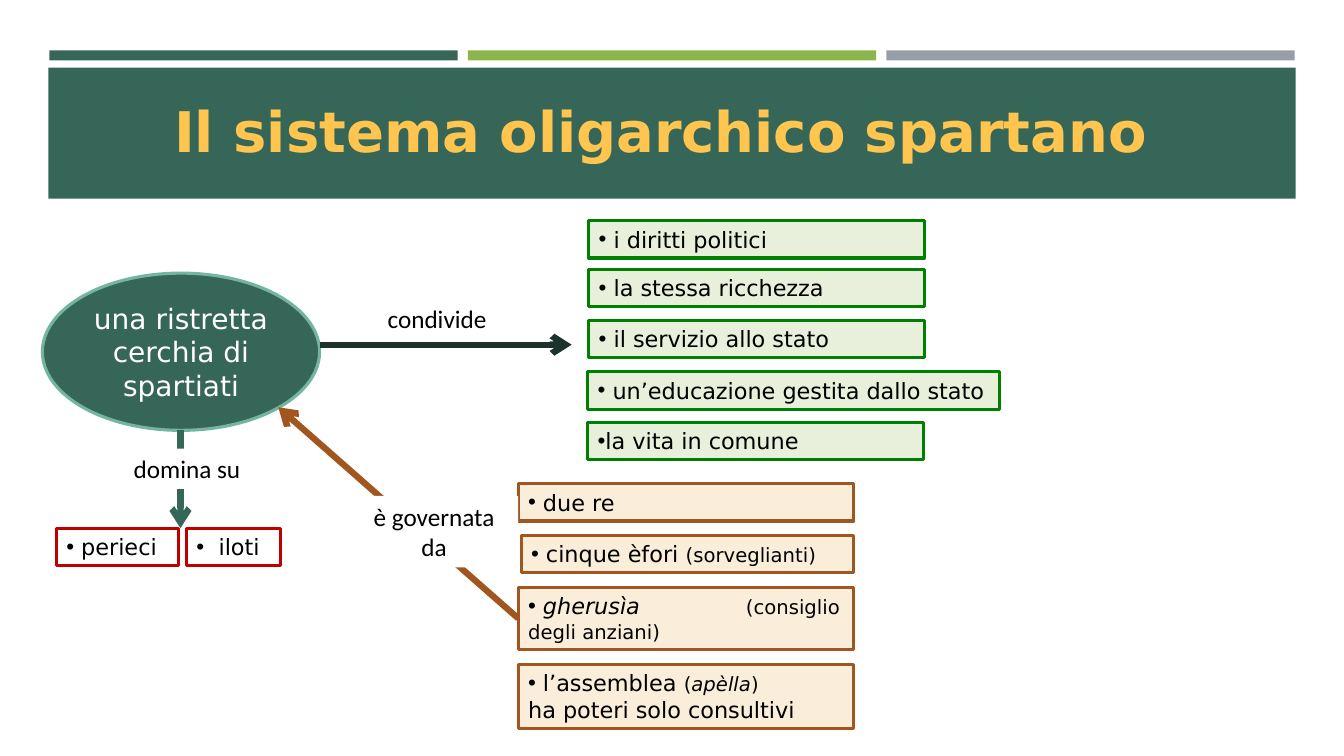
from dataclasses import dataclass

import pptx
import pptx.util
from lxml import etree
from pptx.dml.color import RGBColor
from pptx.enum.shapes import MSO_CONNECTOR, MSO_SHAPE
from pptx.enum.text import MSO_ANCHOR, PP_ALIGN
from pptx.oxml.ns import qn
from pptx.util import Inches


@dataclass(frozen=True)
class Theme:
    dark_green: str = "366658"
    deep_green: str = "1B332C"
    mint: str = "74B5A2"
    lime: str = "8CB64A"
    grey: str = "969FA7"
    gold: str = "FFC54E"
    white: str = "FFFFFF"
    black: str = "000000"
    brown: str = "A1561F"
    shared: tuple = ("E8F0DB", "008000")
    governing: tuple = ("FAEEDA", "A1561F")
    subject: tuple = ("FFFFFF", "C00000")
    font: str = "DejaVu Sans"
    label_font: str = "Calibri"
    title_size: int = 40
    ellipse_size: int = 20
    label_size: int = 18
    item_size: int = 16
    detail_size: int = 14
    border: float = 2.25
    arrow: float = 4.5


THEME = Theme()


def add_box(page, at, fill, line=None, kind=MSO_SHAPE.RECTANGLE):
    box = page.shapes.add_shape(kind, *(Inches(length) for length in at))
    box.shadow.inherit = False
    box.fill.solid()
    box.fill.fore_color.rgb = RGBColor.from_string(fill)
    if line:
        box.line.color.rgb = RGBColor.from_string(line)
        box.line.width = pptx.util.Pt(THEME.border)
    else:
        box.line.fill.background()
    return box


def start_text(box, align, anchor=MSO_ANCHOR.TOP):
    frame = box.text_frame
    frame.word_wrap = True
    frame.vertical_anchor = anchor
    para = frame.paragraphs[0]
    para.alignment = align
    return para


def add_span(para, text, size, color=THEME.black, font=THEME.font, bold=False, italic=False):
    span = para.add_run()
    span.text = text
    span.font.name = font
    span.font.size = pptx.util.Pt(size)
    span.font.color.rgb = RGBColor.from_string(color)
    span.font.bold = bold
    span.font.italic = italic


def add_item(page, at, colors, text, gap=0):
    """Bordered box with a bullet; gap is the hanging indent after it."""
    box = add_box(page, at, *colors)
    para = start_text(box, PP_ALIGN.LEFT)
    properties = para._p.get_or_add_pPr()
    properties.set("marL", str(Inches(gap)))
    properties.set("indent", str(-Inches(gap)))
    etree.SubElement(properties, qn("a:buFont"), typeface="Arial")
    etree.SubElement(properties, qn("a:buChar"), char="•")
    add_span(para, text, THEME.item_size, italic=text.endswith("\t"))
    return box, para


def add_tab_stop(para, position):
    stops = etree.SubElement(para._p.get_or_add_pPr(), qn("a:tabLst"))
    etree.SubElement(stops, qn("a:tab"), pos=str(Inches(position)), algn="l")


def add_label(page, at, text, fill):
    box = add_box(page, at, fill)
    para = start_text(box, PP_ALIGN.CENTER)
    add_span(para, text, THEME.label_size, font=THEME.label_font)
    return box


def add_arrow(page, start, end, color):
    arrow = page.shapes.add_connector(
        MSO_CONNECTOR.STRAIGHT, *(Inches(length) for length in start + end))
    arrow.line.color.rgb = RGBColor.from_string(color)
    arrow.line.width = pptx.util.Pt(THEME.arrow)
    etree.SubElement(arrow.line._get_or_add_ln(), qn("a:tailEnd"), type="arrow")
    etree.SubElement(arrow._element.spPr, qn("a:effectLst"))
    return arrow


def add_header(page):
    for column, color in enumerate((THEME.dark_green, THEME.lime, THEME.grey)):
        add_box(page, (0.49 + 4.15 * column, 0.5, 4.05, 0.1), color)
    add_box(page, (0.48, 0.67, 12.37, 1.3), THEME.dark_green)
    title = page.shapes.add_textbox(Inches(1.55), Inches(0.91), Inches(10), Inches(0.77))
    para = start_text(title, PP_ALIGN.CENTER)
    add_span(para, "Il sistema oligarchico spartano", THEME.title_size, THEME.gold, bold=True)


def add_spartiates(page):
    ellipse = add_box(page, (0.42, 2.71, 2.75, 1.56), THEME.dark_green, THEME.mint,
                      MSO_SHAPE.OVAL)
    para = start_text(ellipse, PP_ALIGN.CENTER, MSO_ANCHOR.MIDDLE)
    add_span(para, "una ristretta cerchia di spartiati", THEME.ellipse_size, THEME.white)


def add_shared_goods(page):
    for left, top, width, text in (
        (5.84, 2.19, 3.33, " i diritti politici"),
        (5.84, 2.67, 3.33, " la stessa ricchezza"),
        (5.84, 3.18, 3.33, " il servizio allo stato"),
        (5.83, 3.69, 4.08, " un’educazione gestita dallo stato"),
        (5.83, 4.19, 3.33, "la vita in comune"),
    ):
        add_item(page, (left, top, width, 0.37), THEME.shared, text)


def add_governing_bodies(page):
    """Return the council box, where the governing arrow starts."""
    add_item(page, (5.14, 4.8, 3.33, 0.37), THEME.governing, " due re")

    ephors = add_item(page, (5.17, 5.31, 3.3, 0.37), THEME.governing, " cinque èfori ")[1]
    add_span(ephors, "(sorveglianti)", THEME.detail_size)

    council, para = add_item(page, (5.14, 5.83, 3.33, 0.61), THEME.governing, " gherusìa\t")
    add_tab_stop(para, 2.16)
    add_span(para, "(consiglio degli anziani)", THEME.detail_size)

    assembly = add_item(page, (5.14, 6.59, 3.33, 0.64), THEME.governing, " l’assemblea ")[1]
    add_span(assembly, "(", THEME.detail_size)
    add_span(assembly, "apèlla", THEME.detail_size, italic=True)
    add_span(assembly, ")", THEME.detail_size)
    assembly.add_line_break()
    add_span(assembly, "ha poteri solo consultivi", THEME.item_size)
    return council


def main():
    deck = pptx.Presentation()
    deck.slide_width, deck.slide_height = Inches(13.33), Inches(7.5)
    page = deck.slides.add_slide(deck.slide_layouts[6])

    # Title band and groups of boxes
    add_header(page)
    add_spartiates(page)
    add_shared_goods(page)
    council = add_governing_bodies(page)
    add_item(page, (0.56, 5.24, 1.21, 0.37), THEME.subject, " perieci")
    add_item(page, (1.85, 5.24, 0.93, 0.37), THEME.subject, "iloti", gap=0.22)

    # Arrows
    add_arrow(page, (3.17, 3.42), (5.67, 3.42), THEME.deep_green)
    add_arrow(page, (1.79, 4.27), (1.79, 5.24), THEME.dark_green)
    governs = add_arrow(page, (5.14, 6.13), (2.76, 4.04), THEME.brown)
    governs.begin_connect(council, 1)

    # Labels lie over the arrows
    for left, top, height, text in (
        (3.5, 2.96, 0.4, "condivide"),
        (1.02, 4.45, 0.4, "domina su"),
        (3.47, 4.92, 0.71, "è governata da"),
    ):
        add_label(page, (left, top, 1.67, height), text, THEME.white)

    deck.save("out.pptx")


if __name__ == "__main__":
    main()
